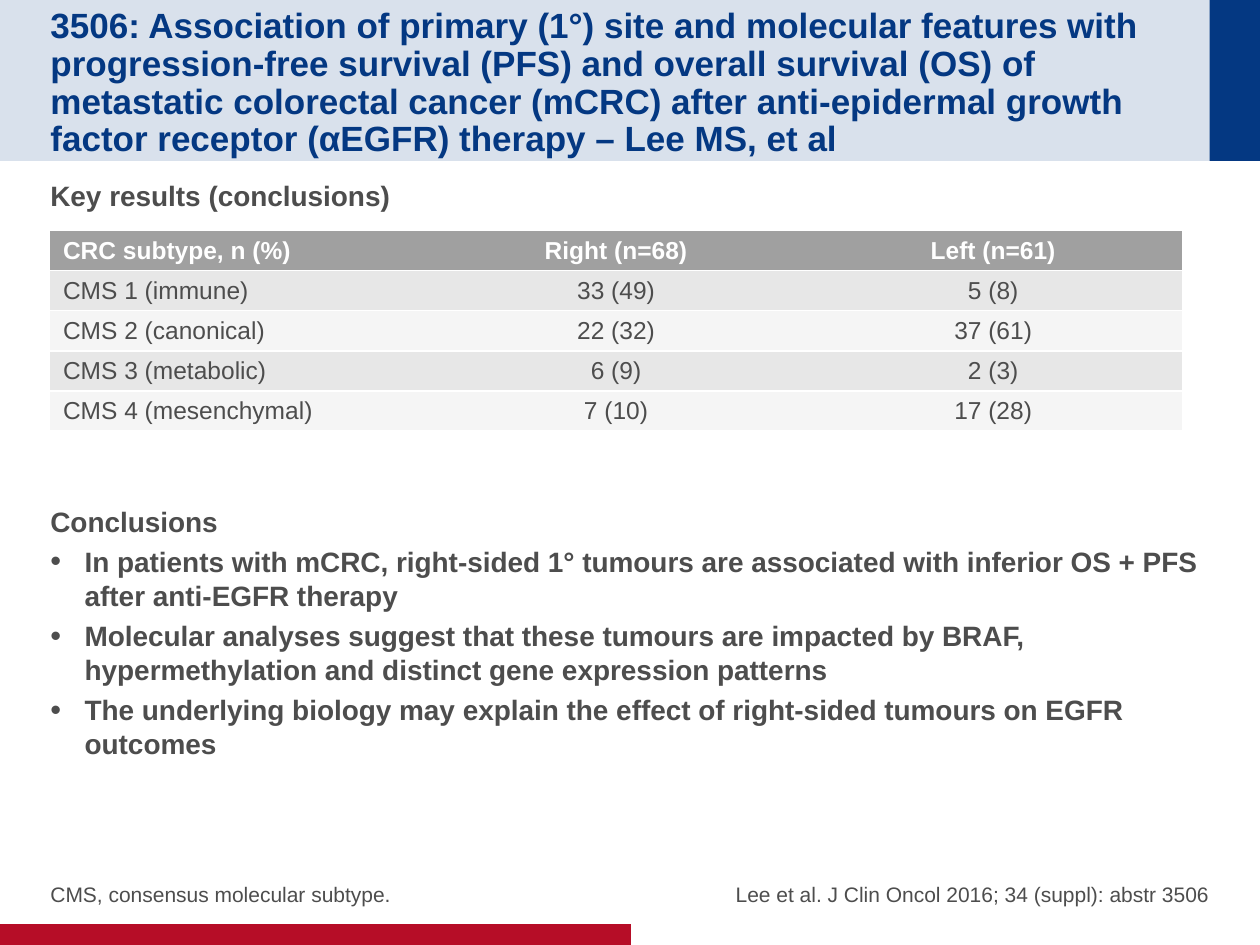
"""Build the conclusions slide for abstract 3506."""
from lxml import etree
from pptx import Presentation
from pptx import util as u
from pptx.dml.color import RGBColor
from pptx.enum import shapes, text
from pptx.oxml import ns

Pt = u.Pt
NAVY = RGBColor(0x04, 0x38, 0x82)
PALE = RGBColor(0xD9, 0xE1, 0xEC)
RED = RGBColor(0xB6, 0x0D, 0x27)
INK = RGBColor(0x4D, 0x4D, 0x4D)
WHITE = RGBColor(0xFF, 0xFF, 0xFF)
HEAD = RGBColor(0xA0, 0xA0, 0xA0)
BANDS = [RGBColor(0xF5, 0xF5, 0xF5), RGBColor(0xE7, 0xE7, 0xE7)]
LEFT, CENTER, RIGHT = text.PP_ALIGN.LEFT, text.PP_ALIGN.CENTER, text.PP_ALIGN.RIGHT
EDGE = 28.8


def write(para, words, size, color, bold=False, align=LEFT):
    para.alignment = align
    run = para.add_run()
    run.text = words
    run.font.name = "Arial"
    run.font.size = Pt(size)
    run.font.bold = bold
    run.font.color.rgb = color


def frame(box, top, low, anchor):
    body = box.text_frame
    body.word_wrap = True
    body.auto_size = text.MSO_AUTO_SIZE.NONE
    body.margin_left = body.margin_right = 0
    body.margin_top, body.margin_bottom = Pt(top), Pt(low)
    body.vertical_anchor = anchor
    return body


deck = Presentation()
deck.slide_width, deck.slide_height = Pt(720), Pt(540)
slide = deck.slides.add_slide(deck.slide_layouts[5])

bars = [
    (0, 0, 720, 92, PALE),
    (691.2, 0, 28.8, 92, NAVY),
    (0, 528, 360.6, 12, RED),
]
for *rect, color in bars:
    bar = slide.shapes.add_shape(shapes.MSO_SHAPE.RECTANGLE, *map(Pt, rect))
    bar.shadow.inherit = False
    bar.fill.solid()
    bar.fill.fore_color.rgb = color
    bar.line.fill.background()

title = slide.shapes.title
title.left, title.top, title.width, title.height = map(Pt, (EDGE, 14.4, 648.6, 63.4))
title.element.getparent().append(title.element)
para = frame(title, 3.6, 0, text.MSO_ANCHOR.MIDDLE).paragraphs[0]
para.line_spacing = 0.9
write(para, "3506: Association of primary (1°) site and molecular features with "
      "progression-free survival (PFS) and overall survival (OS) of metastatic "
      "colorectal cancer (mCRC) after anti-epidermal growth factor receptor "
      "(αEGFR) therapy – Lee MS, et al", 20, NAVY, True)

box = slide.shapes.add_textbox(*map(Pt, (EDGE, 98.6, 662.4, 373.7)))
body = frame(box, 3.6, 3.6, text.MSO_ANCHOR.TOP)
write(body.paragraphs[0], "Key results (conclusions)", 16, INK, True)
para = body.add_paragraph()
para.space_before, para.space_after = Pt(166.7), Pt(4)
write(para, "Conclusions", 16, INK, True)

points = [
    "In patients with mCRC, right-sided 1° tumours are associated with "
    "inferior OS + PFS after anti-EGFR therapy",
    "Molecular analyses suggest that these tumours are impacted by BRAF, "
    "hypermethylation and distinct gene expression patterns",
    "The underlying biology may explain the effect of right-sided tumours "
    "on EGFR outcomes",
]
for point in points:
    para = body.add_paragraph()
    para.space_after = Pt(4)
    write(para, point, 16, INK, True)
    props = para._p.get_or_add_pPr()
    props.set("marL", str(Pt(19.6)))
    props.set("indent", str(-Pt(19.6)))
    etree.SubElement(props, ns.qn("a:buSzPct")).set("val", "110000")
    etree.SubElement(props, ns.qn("a:buFont")).set("typeface", "Arial")
    etree.SubElement(props, ns.qn("a:buChar")).set("char", "•")

notes = [
    (EDGE, 498.2, 20.2, "CMS, consensus molecular subtype.", LEFT),
    (365.8, 480.2, 38.2, "Lee et al. J Clin Oncol 2016; 34 (suppl): abstr 3506", RIGHT),
]
for left, top, high, words, align in notes:
    box = slide.shapes.add_textbox(*map(Pt, (left, top, 325.4, high)))
    body = frame(box, 0, 0, text.MSO_ANCHOR.BOTTOM)
    write(body.paragraphs[0], words, 12, INK, align=align)

rows = [
    ("CRC subtype, n (%)", "Right (n=68)", "Left (n=61)"),
    ("CMS 1 (immune)", "33 (49)", "5 (8)"),
    ("CMS 2 (canonical)", "22 (32)", "37 (61)"),
    ("CMS 3 (metabolic)", "6 (9)", "2 (3)"),
    ("CMS 4 (mesenchymal)", "7 (10)", "17 (28)"),
]
place = map(Pt, (EDGE, 131.8, 646.5, 114.5))
grid = slide.shapes.add_table(len(rows), len(rows[0]), *place).table
for col in grid.columns:
    col.width = Pt(215.5)
for r, row in enumerate(rows):
    grid.rows[r].height = Pt(22.9)
    for c, words in enumerate(row):
        cell = grid.cell(r, c)
        cell.margin_top = cell.margin_bottom = Pt(3)
        cell.vertical_anchor = text.MSO_ANCHOR.MIDDLE
        cell.fill.solid()
        cell.fill.fore_color.rgb = BANDS[r % 2] if r else HEAD
        write(cell.text_frame.paragraphs[0], words, 14, INK if r else WHITE,
              r == 0, CENTER if c else LEFT)
        props = cell._tc.get_or_add_tcPr()
        for i, side in enumerate("LRTB"):
            line = etree.Element(ns.qn("a:ln" + side), w=str(Pt(1)))
            if side in "LR":
                etree.SubElement(line, ns.qn("a:noFill"))
            else:
                fill = etree.SubElement(line, ns.qn("a:solidFill"))
                etree.SubElement(fill, ns.qn("a:srgbClr")).set("val", str(WHITE))
            props.insert(i, line)

deck.save("out.pptx")
